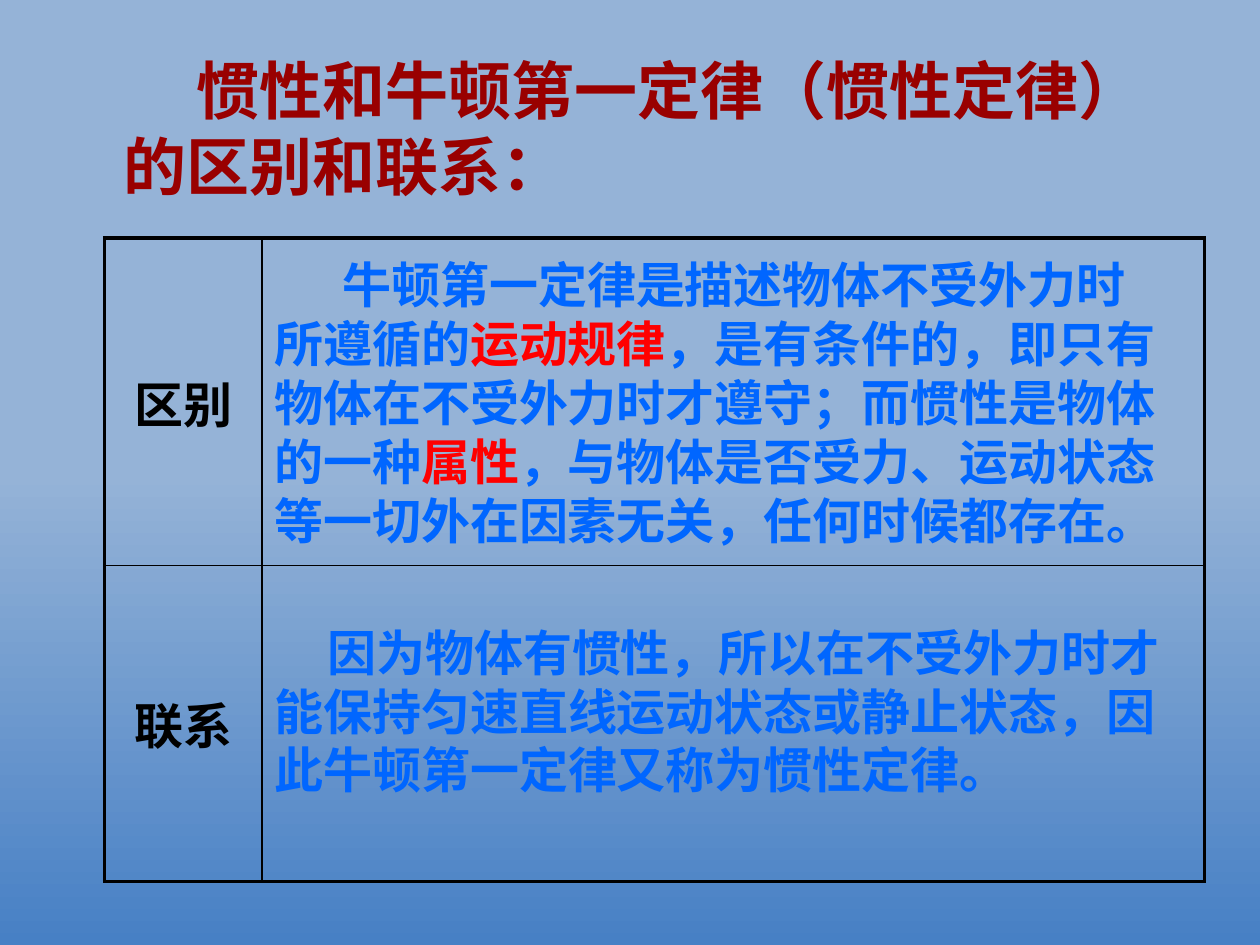
from lxml import etree
from pptx import Presentation
from pptx.dml.color import RGBColor
from pptx.enum.text import MSO_ANCHOR, MSO_AUTO_SIZE, PP_ALIGN
from pptx.oxml.ns import qn
from pptx.util import Inches, Pt

MIDDLE = MSO_ANCHOR.MIDDLE
GROW = MSO_AUTO_SIZE.SHAPE_TO_FIT_TEXT
CENTER = PP_ALIGN.CENTER

WIDTH, HEIGHT = Inches(10), Inches(7.5)
COLORS = {
    "sky": "95B3D7",
    "deep": "4780C5",
    "title": "990000",
    "body": "0066FF",
    "accent": "FF0000",
    "ink": "000000",
}
OUTER, INNER = Pt(2.25), Pt(1)

TITLE_BOX = (0.088, 0.048, 0.853, 0.173)
TABLE_BOX = (0.083, 0.252, 0.873, 0.681)
DIFFERENCE_BOX = (0.208, 0.263, 0.733, 0.325)
CONNECTION_BOX = (0.208, 0.652, 0.725, 0.2)
LABEL_SHARE, FIRST_ROW_SHARE = 0.143, 0.509

TITLE = [("惯性和牛顿第一定律（惯性定律）的区别和联系：", "title")]
LABELS = ["区别", "联系"]
DIFFERENCE = [
    ("牛顿第一定律是描述物体不受外力时所遵循的", "body"),
    ("运动规律", "accent"),
    ("，是有条件的，即只有物体在不受外力时才遵守；而惯性是物体的一种", "body"),
    ("属性", "accent"),
    ("，与物体是否受力、运动状态等一切外在因素无关，任何时候都存在。", "body"),
]
CONNECTION = [
    ("因为物体有惯性，所以在不受外力时才能保持匀速直线运动状态或静止状态，"
     "因此牛顿第一定律又称为惯性定律。", "body"),
]


def color(name):
    return RGBColor.from_string(COLORS[name])


def place(box):
    left, top, width, height = box
    return (int(left * WIDTH), int(top * HEIGHT),
            int(width * WIDTH), int(height * HEIGHT))


def style(font, name, size, color_name):
    font.name, font.size, font.bold = name, Pt(size), True
    font.color.rgb = color(color_name)


def paint_background(slide):
    fill = slide.background.fill
    fill.gradient()
    fill.gradient_angle = 270
    for stop, name, position in zip(fill.gradient_stops, ("sky", "deep"), (0.5, 1)):
        stop.color.rgb = color(name)
        stop.position = position


def add_passage(slide, box, pieces, font_name, size, indent):
    frame = slide.shapes.add_textbox(*place(box)).text_frame
    frame.word_wrap = True
    frame.auto_size = GROW
    paragraph = frame.paragraphs[0]
    paragraph._p.get_or_add_pPr().set("indent", str(Inches(indent)))
    for text, color_name in pieces:
        run = paragraph.add_run()
        run.text = text
        style(run.font, font_name, size, color_name)


def add_borders(cell, widths):
    properties = cell._tc.get_or_add_tcPr()
    for side, width in zip("LRTB", widths):
        line = etree.SubElement(properties, qn(f"a:ln{side}"), w=str(width))
        fill = etree.SubElement(line, qn("a:solidFill"))
        etree.SubElement(fill, qn("a:srgbClr"), val=COLORS["ink"])


def add_comparison_table(slide, box):
    left, top, width, height = place(box)
    table = slide.shapes.add_table(2, 2, left, top, width, height).table
    for tracks, name, total, share in (
        (table.columns, "width", width, LABEL_SHARE),
        (table.rows, "height", height, FIRST_ROW_SHARE),
    ):
        setattr(tracks[0], name, int(total * share))
        setattr(tracks[1], name, total - int(total * share))
    for row in range(2):
        for column in range(2):
            cell = table.cell(row, column)
            edges = (column == 0, column == 1, row == 0, row == 1)
            add_borders(cell, [OUTER if edge else INNER for edge in edges])
            cell.fill.background()
        label = table.cell(row, 0)
        label.text_frame.text = LABELS[row]
        label.vertical_anchor = MIDDLE
        paragraph = label.text_frame.paragraphs[0]
        paragraph.alignment = CENTER
        style(paragraph.runs[0].font, "Arial", 28, "ink")


def main():
    presentation = Presentation()
    presentation.slide_width, presentation.slide_height = WIDTH, HEIGHT
    slide = presentation.slides.add_slide(presentation.slide_layouts[6])
    paint_background(slide)
    add_passage(slide, TITLE_BOX, TITLE, "Times New Roman", 36, 0.58)
    add_comparison_table(slide, TABLE_BOX)
    add_passage(slide, DIFFERENCE_BOX, DIFFERENCE, "Times New Roman", 28, 0.54)
    add_passage(slide, CONNECTION_BOX, CONNECTION, "Calibri", 28, 0.42)
    presentation.save("out.pptx")


if __name__ == "__main__":
    main()
